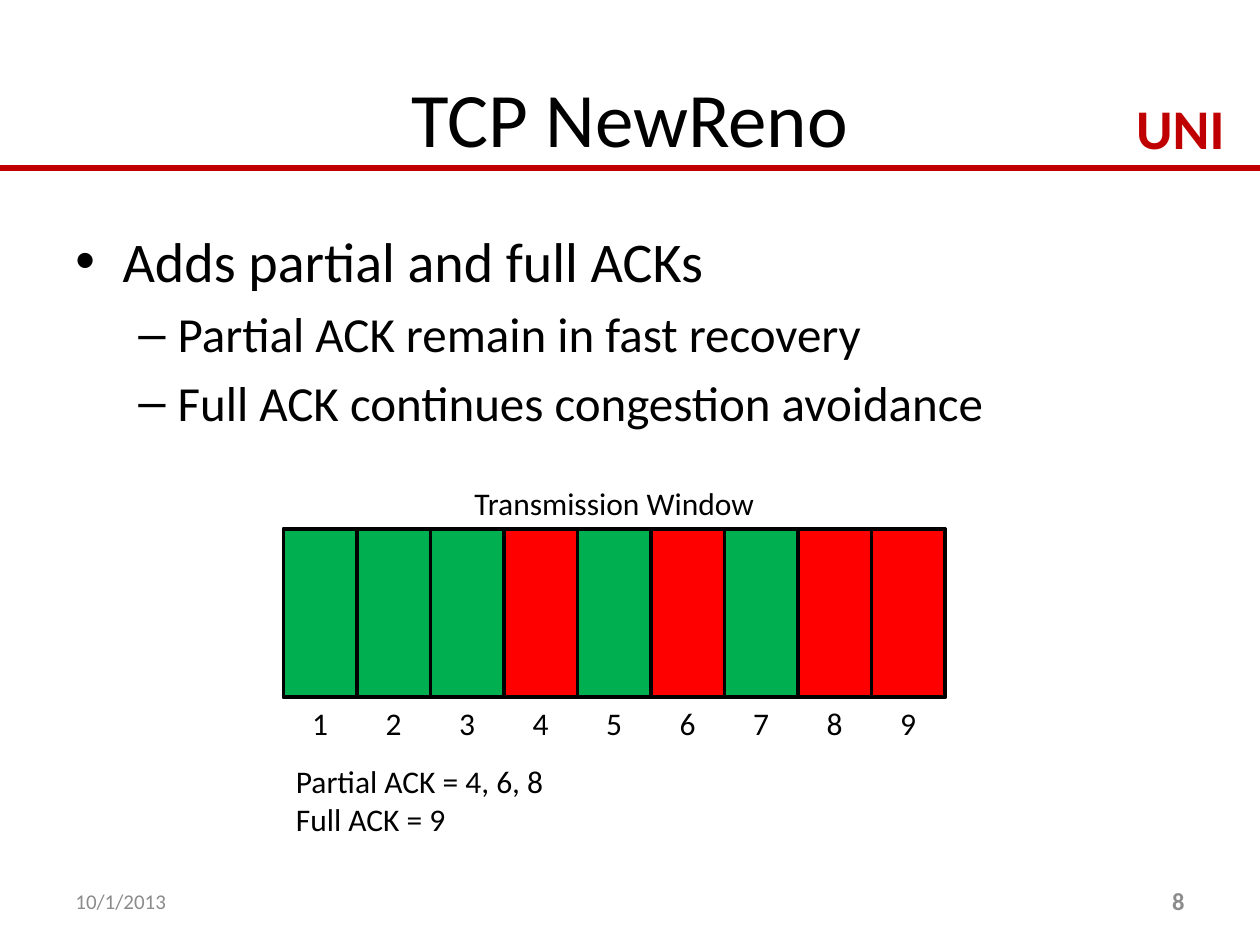
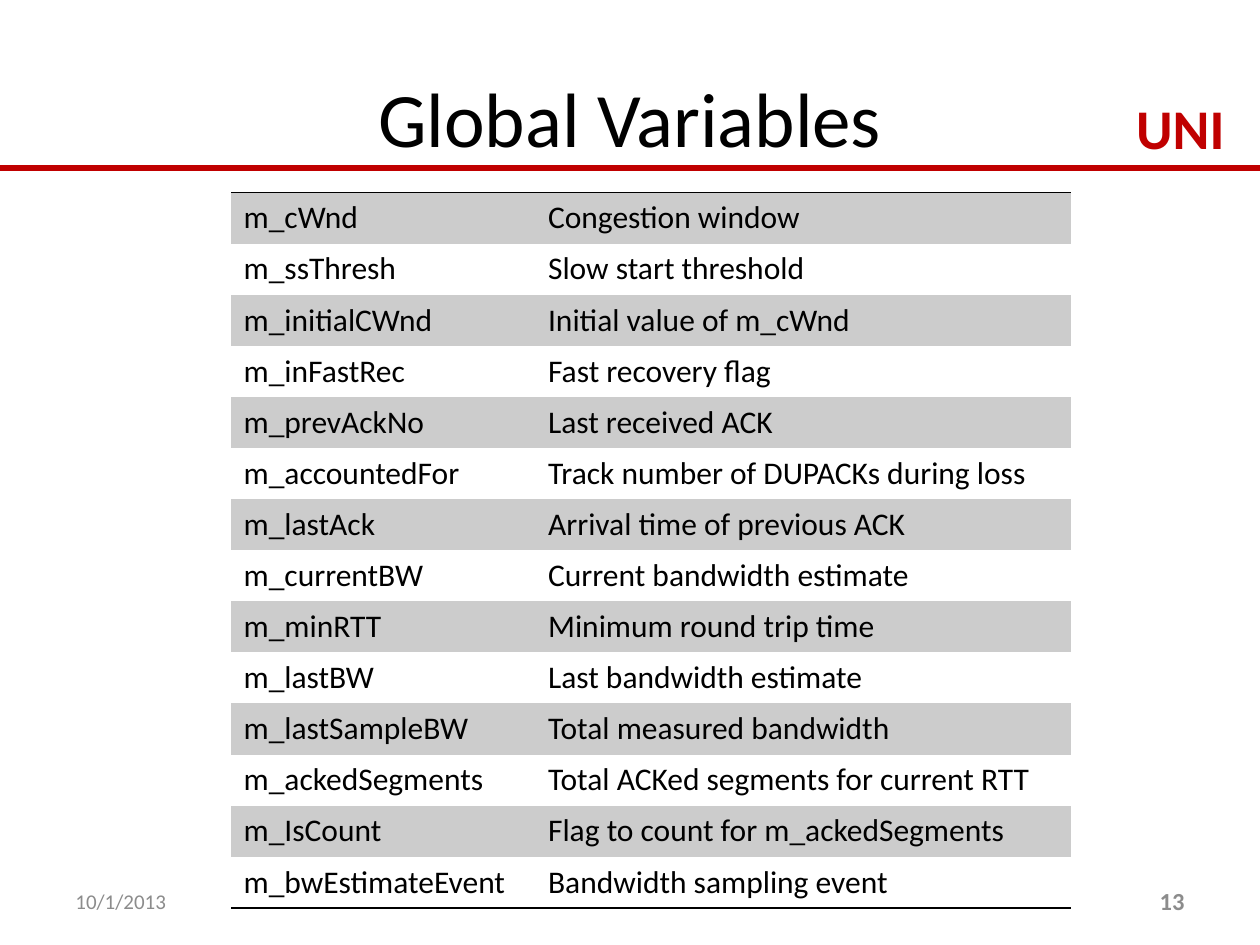
from dataclasses import dataclass

from lxml.etree import SubElement
from pptx import Presentation
from pptx.dml.color import RGBColor
from pptx.enum.shapes import MSO_CONNECTOR, MSO_SHAPE
from pptx.enum.text import MSO_ANCHOR as Anchor, MSO_AUTO_SIZE as AutoSize, PP_ALIGN as Align
from pptx.oxml.ns import qn
from pptx.util import Pt

SLIDE_W, SLIDE_H = 720, 540
PLAIN_TABLE = "{2D5ABB26-0587-4C30-8999-92F81FD0307C}"


@dataclass(frozen=True)
class Theme:
    font: str = "Calibri"
    ink: str = "000000"
    brand: str = "C00000"
    muted: str = "8C8C8C"
    received: str = "00B050"
    lost: str = "FF0000"
    band: str = "CCCCCC"
    title: int = 44
    bullets: tuple = (32, 28)
    mark: int = 32
    body: int = 18
    date: int = 12
    number: int = 14


def rgb(value):
    return RGBColor.from_string(value)


def write(tf, text, font, size, color, bold=False, align=Align.LEFT, anchor=Anchor.TOP, wrap=True):
    """Fill a text frame, one paragraph for each line of text."""
    tf.word_wrap = wrap
    tf.auto_size = AutoSize.NONE
    tf.vertical_anchor = anchor
    for i, line in enumerate(text.split("\n")):
        p = tf.paragraphs[0] if i == 0 else tf.add_paragraph()
        p.alignment = align
        r = p.add_run()
        r.text = line
        r.font.name, r.font.size, r.font.bold = font, Pt(size), bold
        r.font.color.rgb = rgb(color)


class Deck:
    # (character, left margin, hanging indent) for each level
    BULLETS = (("•", 27, 27), ("–", 58.5, 22.5))

    def __init__(self, prs, theme):
        self.prs, self.theme, self.slide = prs, theme, None

    def add_slide(self, title, number):
        t = self.theme
        self.slide = self.prs.slides.add_slide(self.prs.slide_layouts[5])
        sp = self.slide.shapes.title
        sp.left, sp.top, sp.width, sp.height = Pt(36), Pt(21.6), Pt(648), Pt(90)
        write(sp.text_frame, title, t.font, t.title, t.ink, align=Align.CENTER, anchor=Anchor.MIDDLE)
        self.text("UNI", 642.2, 49.7, 69.8, 46, size=t.mark, color=t.brand, bold=True, wrap=False)
        self.rule(0, 96, SLIDE_W, 96)
        footer = dict(color=t.muted, anchor=Anchor.MIDDLE)
        self.text("10/1/2013", 36, 500.5, 168, 28.75, size=t.date, **footer)
        self.text(str(number), 516, 500.5, 168, 28.75, size=t.number, bold=True, align=Align.RIGHT, **footer)

    def text(self, text, x, y, w, h, **fmt):
        t = self.theme
        sp = self.slide.shapes.add_textbox(Pt(x), Pt(y), Pt(w), Pt(h))
        write(sp.text_frame, text, **{"font": t.font, "size": t.body, "color": t.ink, **fmt})
        return sp

    def rule(self, x1, y1, x2, y2):
        line = self.slide.shapes.add_connector(MSO_CONNECTOR.STRAIGHT, Pt(x1), Pt(y1), Pt(x2), Pt(y2))
        line.line.color.rgb, line.line.width = rgb(self.theme.brand), Pt(3.25)
        SubElement(line._element.spPr, qn("a:effectLst"))

    def bullets(self, items, x, y, w, h):
        """Write (level, text) items as a bulleted list."""
        sizes = self.theme.bullets
        sp = self.text("\n".join(text for _, text in items), x, y, w, h)
        for (level, _), p in zip(items, sp.text_frame.paragraphs):
            char, margin, hang = self.BULLETS[level]
            p.level = level
            p.space_before = Pt(0.2 * sizes[level])
            p.runs[0].font.size = Pt(sizes[level])
            pPr = p._p.get_or_add_pPr()
            pPr.set("marL", str(Pt(margin)))
            pPr.set("indent", str(-Pt(hang)))
            SubElement(pPr, qn("a:buFont"), typeface="Arial")
            SubElement(pPr, qn("a:buChar"), char=char)

    def box(self, x, y, w, h, fill=None):
        sp = self.slide.shapes.add_shape(MSO_SHAPE.RECTANGLE, Pt(x), Pt(y), Pt(w), Pt(h))
        sp.shadow.inherit = False
        sp.line.color.rgb, sp.line.width = rgb(self.theme.ink), Pt(2)
        if fill:
            sp.fill.solid()
            sp.fill.fore_color.rgb = rgb(fill)
        else:
            sp.fill.background()

    def table(self, rows, x, y, col_widths, row_h):
        t = self.theme
        frame = self.slide.shapes.add_table(
            len(rows), len(col_widths), Pt(x), Pt(y), Pt(sum(col_widths)), Pt(row_h * len(rows)))
        table = frame.table
        table.first_row = table.horz_banding = False
        table._tbl.tblPr.find(qn("a:tableStyleId")).text = PLAIN_TABLE
        for col, width in zip(table.columns, col_widths):
            col.width = Pt(width)
        for i, values in enumerate(rows):
            table.rows[i].height = Pt(row_h)
            for cell, value in zip(table.rows[i].cells, values):
                write(cell.text_frame, value, t.font, t.body, t.ink)
                if i == 0:
                    self.cell_border(cell, "a:lnT")
                if i == len(rows) - 1:
                    self.cell_border(cell, "a:lnB")
                if i % 2 == 0:
                    cell.fill.solid()
                    cell.fill.fore_color.rgb = rgb(t.band)
                else:
                    cell.fill.background()

    def cell_border(self, cell, side):
        ln = SubElement(cell._tc.get_or_add_tcPr(), qn(side), w=str(Pt(1)))
        SubElement(SubElement(ln, qn("a:solidFill")), qn("a:srgbClr"), val=self.theme.ink)


def newreno_slide(deck):
    t = deck.theme
    deck.add_slide("TCP NewReno", 8)
    deck.bullets([
        (0, "Adds partial and full ACKs"),
        (1, "Partial ACK remain in fast recovery"),
        (1, "Full ACK continues congestion avoidance"),
    ], 36, 126, 648, 356.4)

    segments, lost = range(1, 10), {4, 6, 8, 9}
    left, top, seg_w, seg_h = 162, 302.4, 42, 96
    window_w = seg_w * len(segments)
    deck.box(left, top, window_w, seg_h)
    deck.text("Transmission Window", left, 273, window_w, 29, align=Align.CENTER)
    for i, segment in enumerate(segments):
        x = left + i * seg_w
        deck.box(x, top, seg_w, seg_h, t.lost if segment in lost else t.received)
        deck.text(str(segment), x, 398.8, seg_w, 29, align=Align.CENTER)
    deck.text("Partial ACK = 4, 6, 8\nFull ACK = 9", left, 432, 158, 51, wrap=False)


def variables_slide(deck):
    deck.add_slide("Global Variables", 13)
    deck.table([
        ("m_cWnd", "Congestion window"),
        ("m_ssThresh", "Slow start threshold"),
        ("m_initialCWnd", "Initial value of m_cWnd"),
        ("m_inFastRec", "Fast recovery flag"),
        ("m_prevAckNo", "Last received ACK"),
        ("m_accountedFor", "Track number of DUPACKs during loss"),
        ("m_lastAck", "Arrival time of previous ACK"),
        ("m_currentBW", "Current bandwidth estimate"),
        ("m_minRTT", "Minimum round trip time"),
        ("m_lastBW", "Last bandwidth estimate"),
        ("m_lastSampleBW", "Total measured bandwidth"),
        ("m_ackedSegments", "Total ACKed segments for current RTT"),
        ("m_IsCount", "Flag to count for m_ackedSegments"),
        ("m_bwEstimateEvent", "Bandwidth sampling event"),
    ], 132, 110, (174, 306), 29.2)


def main():
    prs = Presentation()
    prs.slide_width, prs.slide_height = Pt(SLIDE_W), Pt(SLIDE_H)
    deck = Deck(prs, Theme())
    newreno_slide(deck)
    variables_slide(deck)
    prs.save("out.pptx")


if __name__ == "__main__":
    main()
